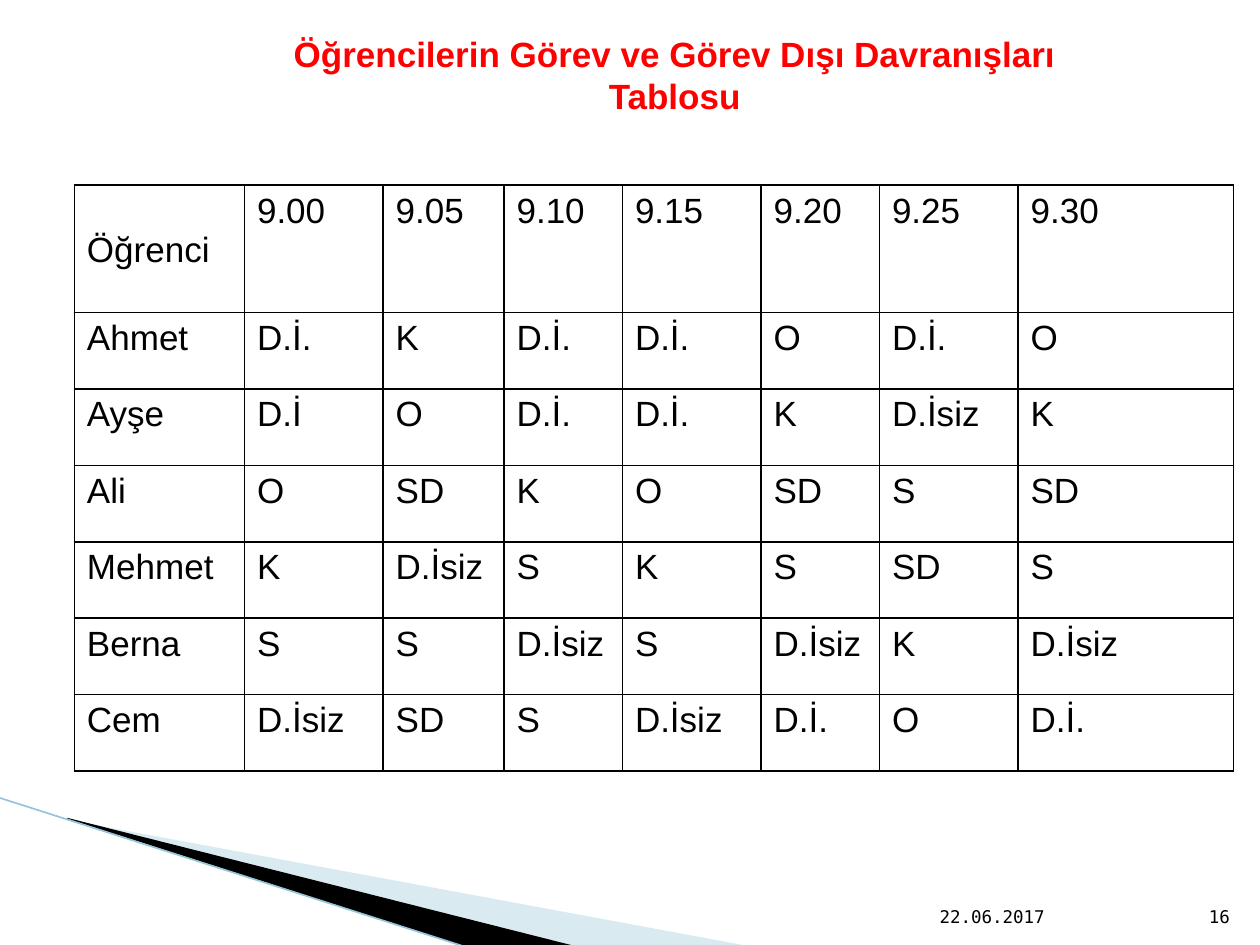
from lxml import etree
from pptx import Presentation
from pptx.dml.color import RGBColor
from pptx.enum.shapes import MSO_CONNECTOR
from pptx.enum.text import MSO_ANCHOR, PP_ALIGN
from pptx.oxml.ns import qn
from pptx.util import Inches, Pt

LEFT, CENTER, RIGHT = PP_ALIGN.LEFT, PP_ALIGN.CENTER, PP_ALIGN.RIGHT
JUSTIFY = PP_ALIGN.JUSTIFY
TOP, BOTTOM = MSO_ANCHOR.TOP, MSO_ANCHOR.BOTTOM
STRAIGHT = MSO_CONNECTOR.STRAIGHT

COLUMN_WIDTHS = [1.35, 1.1, 0.96, 0.94, 1.1, 0.94, 1.1, 1.71]
ROW_HEIGHTS = [1.01] + [0.607] * 6
OBSERVATIONS = [
    ["Öğrenci", "9.00", "9.05", "9.10", "9.15", "9.20", "9.25", "9.30"],
    ["Ahmet", "D.İ.", "K", "D.İ.", "D.İ.", "O", "D.İ.", "O"],
    ["Ayşe", "D.İ", "O", "D.İ.", "D.İ.", "K", "D.İsiz", "K"],
    ["Ali", "O", "SD", "K", "O", "SD", "S", "SD"],
    ["Mehmet", "K", "D.İsiz", "S", "K", "S", "SD", "S"],
    ["Berna", "S", "S", "D.İsiz", "S", "D.İsiz", "K", "D.İsiz"],
    ["Cem", "D.İsiz", "SD", "S", "D.İsiz", "D.İ.", "O", "D.İ."],
]


def color(hex_text):
    return RGBColor.from_string(hex_text)


def write(frame, text, size=20, font="Arial", fill="000000", bold=False, align=LEFT):
    paragraph = frame.paragraphs[0]
    paragraph.alignment = align
    run = paragraph.add_run()
    run.text = text
    run.font.size = Pt(size)
    run.font.name = font
    run.font.bold = bold
    run.font.color.rgb = color(fill)


def add_borders(cell, hex_text, width):
    properties = cell._tc.get_or_add_tcPr()
    for position, side in enumerate(("a:lnL", "a:lnR", "a:lnT", "a:lnB")):
        line = etree.Element(qn(side), w=str(Pt(width)))
        fill = etree.SubElement(line, qn("a:solidFill"))
        etree.SubElement(fill, qn("a:srgbClr"), val=hex_text)
        properties.insert(position, line)


class SlideBuilder:
    def __init__(self, slide):
        self.slide = slide
        self.black = "000000"
        self.footer_font = "DejaVu Sans Mono"

    def polygon(self, points, fill, opacity=100):
        corners = [(Inches(x), Inches(y)) for x, y in points]
        builder = self.slide.shapes.build_freeform(*corners[0])
        builder.add_line_segments(corners[1:], close=True)
        shape = builder.convert_to_shape()
        shape.shadow.inherit = False
        shape.line.fill.background()
        shape.fill.solid()
        shape.fill.fore_color.rgb = color(fill)
        if opacity < 100:
            fill_color = shape._element.spPr.find(qn("a:solidFill"))[0]
            etree.SubElement(fill_color, qn("a:alpha"), val=str(opacity * 1000))

    def line(self, start, end, hex_text, width):
        connector = self.slide.shapes.add_connector(
            STRAIGHT, *(Inches(value) for value in (*start, *end)))
        connector.line.color.rgb = color(hex_text)
        connector.line.width = Pt(width)
        etree.SubElement(connector._element.spPr, qn("a:effectLst"))

    def text(self, box, text, anchor=TOP, **text_format):
        shape = self.slide.shapes.add_textbox(*(Inches(value) for value in box))
        frame = shape.text_frame
        frame.word_wrap = True
        frame.vertical_anchor = anchor
        write(frame, text, **text_format)

    def footer(self, box, text, align=LEFT):
        self.text(box, text, anchor=BOTTOM, size=10, font=self.footer_font, align=align)

    def table(self, left, top, rows, widths, heights):
        table = self.slide.shapes.add_table(
            len(rows), len(widths), Inches(left), Inches(top),
            Inches(sum(widths)), Inches(sum(heights))).table
        for column, width in zip(table.columns, widths):
            column.width = Inches(width)
        for row, height, texts in zip(table.rows, heights, rows):
            row.height = Inches(height)
            for cell, text in zip(row.cells, texts):
                cell.fill.background()
                add_borders(cell, self.black, 1)
                write(cell.text_frame, text, align=JUSTIFY)
        # The corner heading sits one line below the times.
        table.cell(0, 0).margin_top = Inches(0.36)


def main():
    presentation = Presentation()
    presentation.slide_width = Inches(10)
    presentation.slide_height = Inches(7.5)
    builder = SlideBuilder(presentation.slides.add_slide(presentation.slide_layouts[6]))

    builder.polygon([(0.55, 6.51), (5.95, 7.51), (4.56, 7.51), (0.55, 6.5)], "A0CBDC", 40)
    builder.polygon([(0.53, 6.49), (4.57, 7.51), (3.72, 7.52), (0.54, 6.5)], "000000")
    builder.line((-0.01, 6.33), (3.71, 7.52), "97C5D8", 0.95)
    builder.text((1.85, 0.21, 7.01, 0.77),
                 "Öğrencilerin Görev ve Görev Dışı Davranışları Tablosu",
                 fill="FF0000", bold=True, align=CENTER)
    builder.table(0.59, 1.47, OBSERVATIONS, COLUMN_WIDTHS, ROW_HEIGHTS)
    builder.footer((7.36, 7.01, 2.1, 0.4), "22.06.2017")
    builder.footer((9.46, 7.01, 0.4, 0.4), "16", align=RIGHT)
    presentation.save("out.pptx")


if __name__ == "__main__":
    main()
